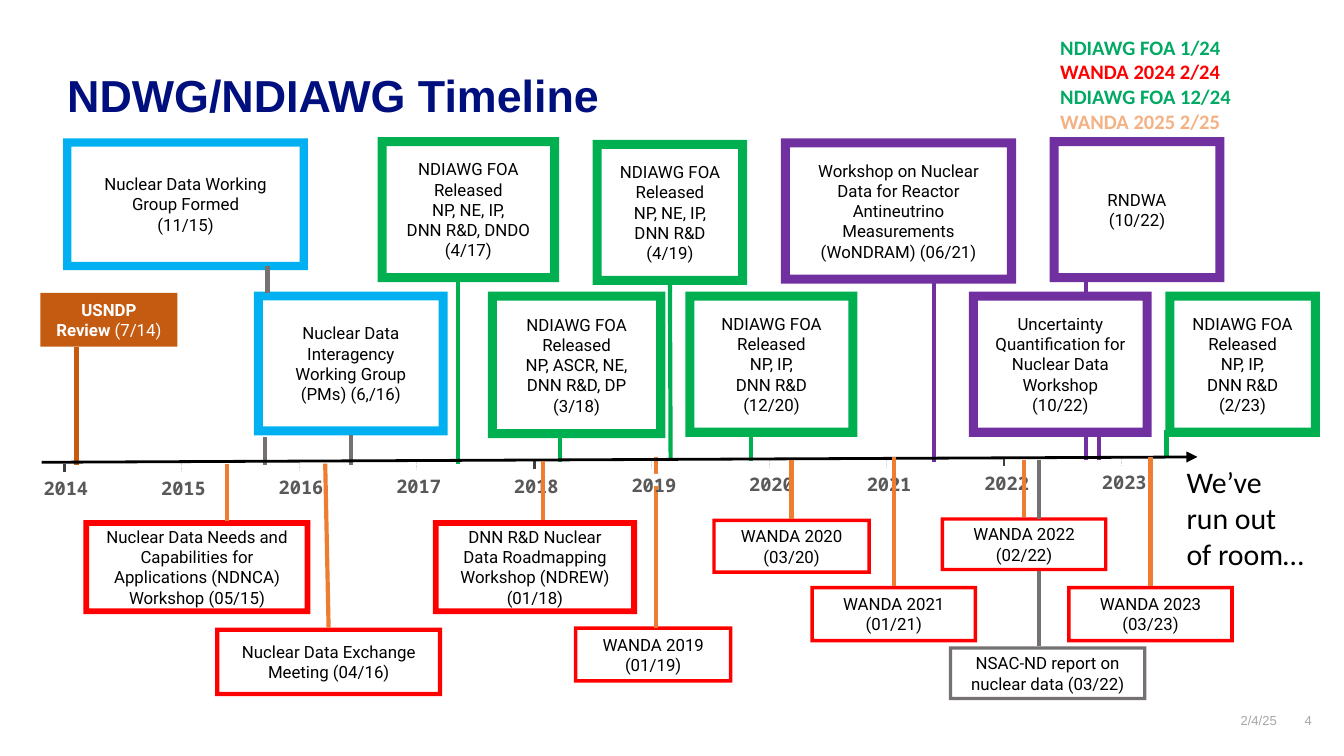
from lxml.etree import SubElement
from pptx import Presentation
from pptx.dml.color import RGBColor
from pptx.enum.dml import MSO_LINE
from pptx.enum.shapes import MSO_CONNECTOR, MSO_SHAPE
from pptx.enum.text import MSO_ANCHOR, PP_ALIGN
from pptx.oxml.ns import qn
from pptx.util import Inches, Pt

RED, GREEN, BLUE, PURPLE = "FF0000", "00B050", "00B0F0", "7030A0"
GREY, ORANGE, BROWN, BLACK = "767171", "ED7D31", "C55A11", "000000"
FOA = "NDIAWG FOA Released"

CARDS = {
    "wanda 2019": ((4.27, 4.66, 1.18, 0.42), RED, ["WANDA 2019\n(01/19)"]),
    "ndnca": ((0.62, 3.87, 1.69, 0.7), RED,
              ["Nuclear Data Needs and Capabilities for Applications (NDNCA) Workshop (05/15)"]),
    "exchange": ((1.6, 4.67, 1.69, 0.51), RED, ["Nuclear Data Exchange Meeting (04/16)"]),
    "ndwg": ((0.47, 1.03, 1.82, 0.98), BLUE, ["Nuclear Data Working Group Formed", "(11/15)"]),
    "foa 2017": ((2.81, 1.02, 1.35, 1.08), GREEN,
                 [FOA, "NP, NE, IP,\nDNN R&D, DNDO (4/17)"]),
    "ndrew": ((3.22, 3.87, 1.52, 0.7), RED,
              ["DNN R&D Nuclear Data Roadmapping Workshop (NDREW) (01/18)"]),
    "foa 2018": ((3.63, 2.17, 1.32, 1.09), GREEN,
                 [FOA, "NP, ASCR, NE,\nDNN R&D, DP (3/18)"]),
    "foa 2019": ((4.41, 1.04, 1.15, 1.08), GREEN, [FOA, "NP, NE, IP,\nDNN R&D (4/19)"]),
    "wanda 2020": ((5.3, 3.86, 1.18, 0.41), RED, ["WANDA 2020\n(03/20)"]),
    "foa 2020": ((5.1, 2.17, 1.28, 1.08), GREEN, [FOA, "NP, IP,\nDNN R&D (12/20)"]),
    "wanda 2021": ((6.03, 4.36, 1.24, 0.42), RED, ["WANDA 2021\n(01/21)"]),
    "wanda 2022": ((7, 3.85, 1.24, 0.4), RED, ["WANDA 2022\n(02/22)"]),
    "wanda 2023": ((7.94, 4.36, 1.24, 0.42), RED, ["WANDA 2023\n(03/23)"]),
    "wondram": ((5.81, 1.03, 1.75, 1.08), PURPLE,
                ["Workshop on Nuclear Data for Reactor Antineutrino Measurements "
                 "(WoNDRAM) (06/21)"]),
    "uncertainty": ((7.21, 2.17, 1.36, 1.08), PURPLE,
                    ["Uncertainty Quantification for Nuclear Data Workshop", "(10/22)"]),
    "pms": ((1.89, 2.17, 1.44, 1.07), BLUE,
            ["Nuclear Data Interagency Working Group (PMs) (6,/16)"]),
    "nsac": ((7.06, 4.81, 1.47, 0.4), GREY, ["NSAC-ND report on nuclear data (03/22)"]),
    "rndwa": ((7.81, 1.02, 1.3, 1.08), PURPLE, ["RNDWA", "(10/22)"]),
    "foa 2023": ((8.67, 2.17, 1.15, 1.08), GREEN, [FOA, "NP, IP,\nDNN R&D (2/23)"]),
}

STEMS_BEHIND = [
    (0.57, 2.58, 3.46, BROWN, None), (1.99, 1.98, 2.18, GREY, None),
    (1.97, 3.25, 3.46, GREY, None), (2.61, 3.24, 3.46, GREY, "pms"),
    (3.41, 2.07, 3.45, GREEN, None), (4.17, 3.22, 3.44, GREEN, None),
    (4.99, 2.12, 3.43, GREEN, "foa 2019"), (5.59, 3.22, 3.43, GREEN, None),
    (8.68, 3.2, 3.41, GREEN, None), (6.95, 2.1, 3.44, PURPLE, None),
    (8.08, 2.06, 2.22, PURPLE, None), (8.08, 3.22, 3.42, PURPLE, None),
    (8.18, 3.24, 3.42, PURPLE, None), (1.69, 3.88, 3.45, ORANGE, None),
    (2.42, 4.67, 3.45, ORANGE, "exchange"), (4.88, 4.67, 3.4, ORANGE, None),
    (7.73, 3.86, 3.42, GREY, None),
]
STEMS_IN_FRONT = [
    (4.04, 3.87, 3.43, ORANGE, None), (5.89, 3.86, 3.42, ORANGE, "wanda 2020"),
    (7.62, 3.85, 3.42, ORANGE, "wanda 2022"), (6.65, 4.36, 3.4, ORANGE, "wanda 2021"),
    (8.56, 4.36, 3.4, ORANGE, "wanda 2023"), (7.73, 4.81, 4.25, GREY, None),
]


def color(value):
    return RGBColor.from_string(value)


def style(span, size, font, ink, bold=False):
    span.font.size = Pt(size)
    span.font.name = font
    span.font.bold = bold
    span.font.color.rgb = color(ink)


def write(shape, lines, align=PP_ALIGN.LEFT, anchor=MSO_ANCHOR.TOP, inset=True, wrap=True,
          **look):
    frame = shape.text_frame
    frame.word_wrap = wrap
    frame.vertical_anchor = anchor
    if not inset:
        frame.margin_left = frame.margin_right = frame.margin_top = frame.margin_bottom = 0
    for index, line in enumerate(lines):
        para = frame.add_paragraph() if index else frame.paragraphs[0]
        para.alignment = align
        for text, extra in line if isinstance(line, list) else [(line, {})]:
            for row, part in enumerate(text.split("\n")):
                if row:
                    para.add_line_break()
                span = para.add_run()
                span.text = part
                style(span, **{**look, **extra})


def add_text(page, box, lines, **look):
    shape = page.shapes.add_textbox(*map(Inches, box))
    write(shape, lines, **look)
    return shape


def add_box(page, kind, box, fill):
    shape = page.shapes.add_shape(kind, *map(Inches, box))
    shape.shadow.inherit = False
    shape.fill.solid()
    shape.fill.fore_color.rgb = color(fill)
    shape.line.fill.background()
    return shape


def add_line(page, start, end, ink, width):
    line = page.shapes.add_connector(MSO_CONNECTOR.STRAIGHT, *map(Inches, start + end))
    line.line.color.rgb = color(ink)
    line.line.width = Pt(width)
    SubElement(line._element.spPr, qn("a:effectLst"))
    return line


def add_card(page, box, fill, lines):
    card = add_box(page, MSO_SHAPE.FRAME, box, fill)
    card.adjustments[0] = 0.062
    write(card, lines, align=PP_ALIGN.CENTER, anchor=MSO_ANCHOR.MIDDLE,
          size=9, font="Roboto", ink=BLACK)
    return card


def add_review(page, box):
    review = add_box(page, MSO_SHAPE.RECTANGLE, box, BROWN)
    write(review, [[("USNDP Review ", {"bold": True}), ("(7/14)", {})]],
          align=PP_ALIGN.CENTER, size=9, font="Roboto", ink="FFFFFF")


def add_stems(page, stems, cards):
    for x, start, end, ink, name in stems:
        stem = add_line(page, (x, start), (x, end), ink, 2.25)
        if name:
            stem.begin_connect(cards[name], 0 if start > end else 2)


def add_axis(page, box):
    left, top, width, height = box
    for index in range(10):
        year = 2014 + index
        major = index % 4 == 0
        x = left + 0.17 + 0.874 * index
        y = top + 0.05 - 0.005 * index
        tick = add_line(page, (x, y), (x, y + 0.06), "404040" if major else "D9D9D9",
                        1.25 if major else 0.5)
        if not major:
            tick.line.dash_style = MSO_LINE.SQUARE_DOT
        label_width = 0.77 if major else 0.55
        label_box = (left + 0.18 + 0.875 * index - label_width / 2, y + 0.1, label_width, 0.09)
        look = dict(align=PP_ALIGN.CENTER, inset=False,
                    size=10, font="Noto Sans Mono", ink="595959", bold=True)
        if year in (2018, 2019, 2021):
            write(add_box(page, MSO_SHAPE.RECTANGLE, label_box, "FFFFFF"), [str(year)], **look)
        else:
            add_text(page, label_box, [str(year)], **look)
    arrow = add_line(page, (left, top + height), (left + width, top), BLACK, 1.5)
    SubElement(arrow.line._get_or_add_ln(), qn("a:tailEnd"), type="triangle")


def add_title(page, box):
    title = page.shapes.title
    title.left, title.top, title.width, title.height = map(Inches, box)
    write(title, ["NDWG/NDIAWG Timeline"], inset=False,
          size=24, font="Arial", ink="000F7E", bold=True)


def add_recent(page, box):
    entries = [("NDIAWG FOA 1/24", "00AA64"), ("WANDA 2024 2/24", RED),
               ("NDIAWG FOA 12/24", "00AA64"), ("WANDA 2025 2/25", "F4B183")]
    add_text(page, box, [[(text, {"ink": ink})] for text, ink in entries], wrap=False,
             size=11, font="Calibri", ink=BLACK, bold=True)


def add_footer(page, box):
    left, top, width, height = box
    for x, part, text in ((left, 0.67, "2/4/25"), (left + width - 0.24, 0.24, "4")):
        add_text(page, (x, top, part, height), [text], align=PP_ALIGN.RIGHT, inset=False,
                 size=7, font="Arial", ink="A6A6A6")


def main():
    deck = Presentation()
    deck.slide_width = Inches(10)
    deck.slide_height = deck.slide_width * 9 // 16
    page = deck.slides.add_slide(deck.slide_layouts[5])
    add_title(page, (0.5, 0.5, 9, 0.73))
    cards = {name: add_card(page, *card) for name, card in CARDS.items()}
    add_review(page, (0.3, 2.18, 1.02, 0.4))
    add_stems(page, STEMS_BEHIND, cards)
    add_axis(page, (0.31, 3.4, 8.6, 0.04))
    add_stems(page, STEMS_IN_FRONT, cards)
    add_text(page, (8.73, 3.4, 1.09, 0.91), ["We’ve run out of room…"],
             size=16, font="Calibri", ink=BLACK)
    add_recent(page, (7.79, 0.21, 1.49, 0.84))
    add_footer(page, (8.83, 5.3, 0.93, 0.16))
    deck.save("out.pptx")


if __name__ == "__main__":
    main()
